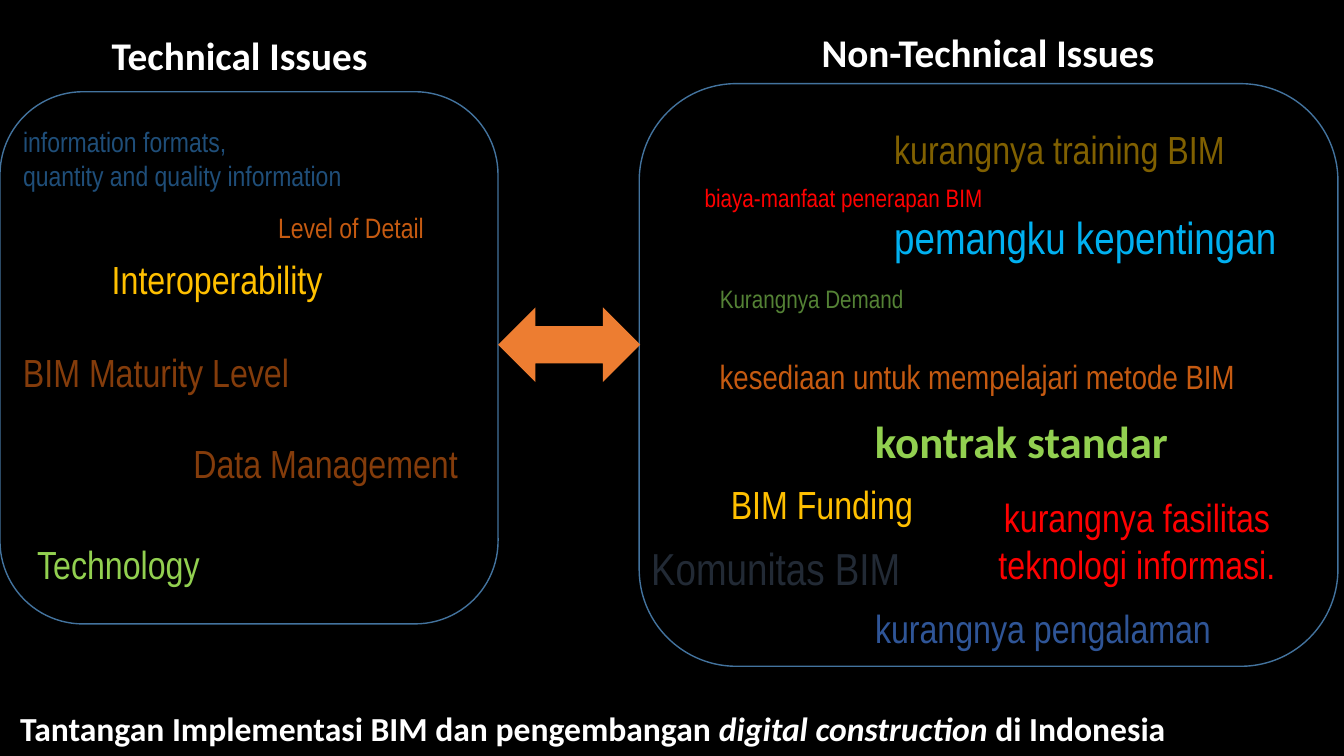
from dataclasses import dataclass

from pptx import Presentation
from pptx.dml.color import RGBColor
from pptx.enum.shapes import MSO_SHAPE
from pptx.enum.text import MSO_ANCHOR, MSO_AUTO_SIZE, PP_ALIGN
from pptx.util import Inches, Pt


@dataclass(frozen=True)
class Theme:
    heading_font: str = "Calibri"
    word_font: str = "Arial Narrow"
    tiny: int = 18
    small: int = 20
    medium: int = 24
    large: int = 28
    huge: int = 32
    background: str = "000000"
    heading: str = "FFFFFF"
    outline: str = "43739E"
    arrow: str = "ED7D31"
    red: str = "FF0000"
    sky: str = "00B0F0"
    rust: str = "C55A11"
    lime: str = "92D050"
    gold: str = "FFC000"
    olive: str = "806000"
    blue: str = "2F5597"
    slate: str = "222A35"
    green: str = "548235"
    navy: str = "1F4E79"
    brown: str = "843C0B"


THEME = Theme()

# text, left, top, width, height, size, colour
TECHNICAL_WORDS = [
    ("information formats,\nquantity and quality information",
     0.13, 1.19, 3.91, 0.77, THEME.small, THEME.navy),
    ("Level of Detail", 2.66, 2.04, 1.8, 0.44, THEME.small, THEME.rust),
    ("Interoperability", 1.01, 2.48, 2.75, 0.57, THEME.large, THEME.gold),
    ("BIM Maturity Level", 0.13, 3.41, 3.14, 0.57, THEME.large, THEME.brown),
    ("Data Management", 1.82, 4.31, 3.12, 0.57, THEME.large, THEME.brown),
    ("Technology", 0.27, 5.31, 2.06, 0.57, THEME.large, THEME.lime),
]
NON_TECHNICAL_WORDS = [
    ("kurangnya training BIM", 8.77, 1.19, 3.96, 0.57, THEME.large, THEME.olive),
    ("biaya-manfaat penerapan BIM", 6.89, 1.76, 3.38, 0.4, THEME.tiny, THEME.red),
    ("pemangku kepentingan", 8.77, 2.03, 4.56, 0.64, THEME.huge, THEME.sky),
    ("Kurangnya Demand", 7.04, 2.76, 2.22, 0.4, THEME.tiny, THEME.green),
    ("kesediaan untuk mempelajari metode BIM",
     7.04, 3.48, 6.03, 0.5, THEME.medium, THEME.rust),
    ("BIM Funding", 7.15, 4.72, 2.17, 0.57, THEME.large, THEME.gold),
    ("Komunitas BIM", 6.36, 5.32, 2.96, 0.64, THEME.huge, THEME.slate),
    ("kurangnya pengalaman", 8.58, 5.95, 4.01, 0.57, THEME.large, THEME.blue),
]


class SlideBuilder:
    def __init__(self, deck, theme):
        self.theme = theme
        self.page = deck.slides.add_slide(deck.slide_layouts[5])
        fill = self.page.background.fill
        fill.solid()
        fill.fore_color.rgb = RGBColor.from_string(theme.background)

    def format_span(self, span, size, color, **extra):
        values = {"name": self.theme.word_font, "size": Pt(size), **extra}
        for name, value in values.items():
            setattr(span.font, name, value)
        span.font.color.rgb = RGBColor.from_string(color)

    def format_frame(self, frame, wrap=False):
        values = {"word_wrap": wrap, "auto_size": MSO_AUTO_SIZE.SHAPE_TO_FIT_TEXT,
                  "vertical_anchor": MSO_ANCHOR.TOP}
        for name, value in values.items():
            setattr(frame, name, value)

    def title(self, spans, left, top, width, height):
        """Fill the title placeholder from (text, italic) pairs."""
        box = self.page.shapes.title
        places = {"left": left, "top": top, "width": width, "height": height}
        for name, value in places.items():
            setattr(box, name, Inches(value))
        self.format_frame(box.text_frame)
        para = box.text_frame.paragraphs[0]
        para.alignment = PP_ALIGN.LEFT
        for text, italic in spans:
            span = para.add_run()
            span.text = text
            self.format_span(span, self.theme.medium, self.theme.heading, bold=True,
                             italic=italic, name=self.theme.heading_font)

    def words(self, text, left, top, width, height, size, color,
              wrap=False, align=PP_ALIGN.LEFT, **extra):
        box = self.page.shapes.add_textbox(*map(Inches, (left, top, width, height)))
        frame = box.text_frame
        frame.text = text
        self.format_frame(frame, wrap)
        for para in frame.paragraphs:
            para.alignment = align
            for span in para.runs:
                self.format_span(span, size, color, **extra)

    def bold_words(self, text, left, top, width, height, size, color):
        self.words(text, left, top, width, height, size, color,
                   bold=True, name=self.theme.heading_font)

    def panel(self, left, top, width, height):
        shape = self.page.shapes.add_shape(
            MSO_SHAPE.ROUNDED_RECTANGLE, *map(Inches, (left, top, width, height)))
        shape.shadow.inherit = False
        shape.fill.background()
        shape.line.color.rgb = RGBColor.from_string(self.theme.outline)
        shape.line.width = Pt(1)

    def double_arrow(self, left, top, width, height):
        shape = self.page.shapes.add_shape(
            MSO_SHAPE.LEFT_RIGHT_ARROW, *map(Inches, (left, top, width, height)))
        shape.shadow.inherit = False
        shape.fill.solid()
        shape.fill.fore_color.rgb = RGBColor.from_string(self.theme.arrow)
        shape.line.fill.background()


def main():
    deck = Presentation()
    deck.slide_width, deck.slide_height = Inches(13.33), Inches(7.5)
    builder = SlideBuilder(deck, THEME)

    builder.title([("Tantangan Implementasi BIM dan pengembangan ", False),
                   ("digital construction", True),
                   (" di Indonesia", False)], 0.1, 6.97, 11.67, 0.5)
    builder.panel(0, 0.91, 4.94, 5.28)
    builder.panel(6.34, 0.83, 6.93, 5.78)
    builder.double_arrow(4.94, 3.05, 1.41, 0.74)

    builder.bold_words("Technical Issues", 1.01, 0.26, 2.77, 0.57,
                       THEME.large, THEME.heading)
    builder.bold_words("Non-Technical Issues", 8.05, 0.23, 3.66, 0.57,
                       THEME.large, THEME.heading)
    for entry in TECHNICAL_WORDS + NON_TECHNICAL_WORDS:
        builder.words(*entry)
    builder.bold_words("kontrak standar", 8.58, 4.06, 3.13, 0.64,
                       THEME.huge, THEME.lime)
    builder.words("kurangnya fasilitas teknologi informasi.", 9.32, 4.84, 3.91, 1.04,
                  THEME.large, THEME.red, wrap=True, align=PP_ALIGN.CENTER)
    deck.save("out.pptx")


if __name__ == "__main__":
    main()
